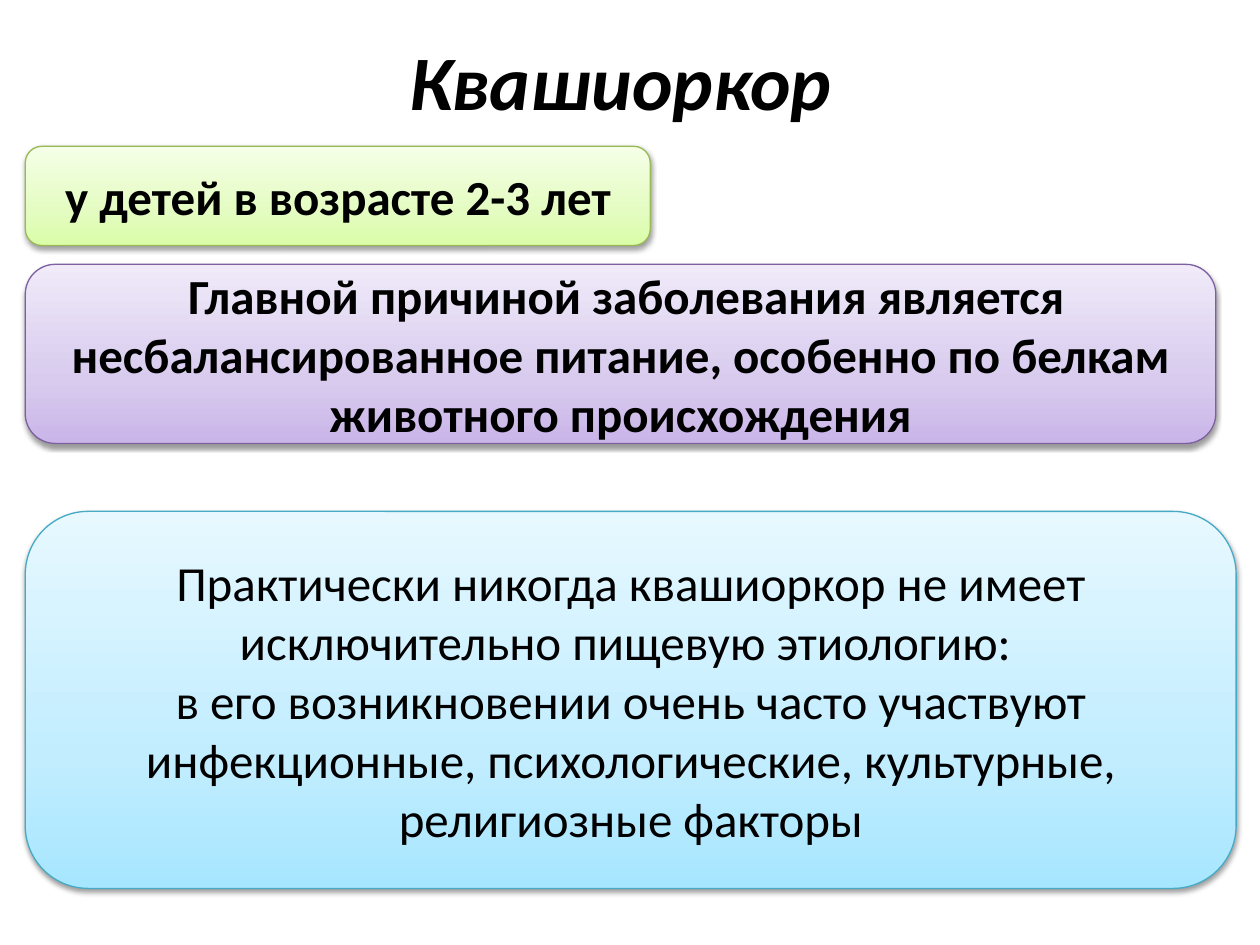
import copy

import lxml.etree
import pptx
import pptx.dml.color
import pptx.enum.shapes
import pptx.enum.text
import pptx.oxml.ns
import pptx.util

TITLE = {"at": (1.09, 0.53, 22.86, 2.16), "text": "Квашиоркор"}
PANEL_LEFT = 0.51
PANELS = [
    {
        "look": "violet", "top": 5.33, "size": (24.0, 3.61), "bold": True,
        "lines": [" Главной причиной заболевания является несбалансированное питание, "
                  "особенно по белкам животного происхождения"],
    },
    {
        "look": "green", "top": 2.95, "size": (12.6, 2.0), "bold": True,
        "lines": ["у детей в возрасте 2-3 лет"],
    },
    {
        "look": "blue", "top": 10.31, "size": (24.41, 7.6), "bold": False,
        "lines": ["Практически никогда квашиоркор не имеет исключительно пищевую этиологию: ",
                  "в его возникновении очень часто участвуют инфекционные, психологические, "
                  "культурные, религиозные факторы"],
    },
]
THEME = {
    "font": "Calibri",
    "ink": "000000",
    "title_size": 44,
    "body_size": 28,
    "line_width": 0.75,
    "stops": (0, 0.35, 1),
    "shadow": {"blur": 3.1, "distance": 1.6, "opacity": 38},
    "violet": {"fill": ("C9B5E8", "D8CBEE", "F0EAF9"), "line": "7D60A0"},
    "green": {"fill": ("DAFDA7", "E4FCC2", "F5FFE7"), "line": "98B955"},
    "blue": {"fill": ("A7E6FF", "C1EDFF", "E7F8FF"), "line": "46AAC5"},
}

qn = pptx.oxml.ns.qn


def rgb(code):
    return pptx.dml.color.RGBColor.from_string(code)


def write(box, lines, size, bold, italic=False):
    frame = box.text_frame
    frame.word_wrap = True
    frame.vertical_anchor = pptx.enum.text.MSO_ANCHOR.MIDDLE
    for index, line in enumerate(lines):
        para = frame.add_paragraph() if index else frame.paragraphs[0]
        para.alignment = pptx.enum.text.PP_ALIGN.CENTER
        span = para.add_run()
        span.text = line
        span.font.name = THEME["font"]
        span.font.size = pptx.util.Pt(size)
        span.font.bold = bold
        span.font.italic = italic
        span.font.color.rgb = rgb(THEME["ink"])


def paint_gradient(box, colours):
    box.fill.gradient()
    box.fill.gradient_angle = 90
    stop_list = box._element.spPr.find(qn("a:gradFill")).find(qn("a:gsLst"))
    stop_list.insert(1, copy.deepcopy(stop_list[0]))
    for stop, position, colour in zip(box.fill.gradient_stops, THEME["stops"], colours):
        stop.position = position
        stop.color.rgb = rgb(colour)


def cast_shadow(box):
    look = THEME["shadow"]
    box.shadow.inherit = False
    effects = box._element.spPr.find(qn("a:effectLst"))
    shadow = lxml.etree.SubElement(
        effects, qn("a:outerShdw"),
        blurRad=str(pptx.util.Pt(look["blur"])), dist=str(pptx.util.Pt(look["distance"])),
        dir="5400000", rotWithShape="0")
    colour = lxml.etree.SubElement(shadow, qn("a:srgbClr"), val=THEME["ink"])
    lxml.etree.SubElement(colour, qn("a:alpha"), val=str(look["opacity"] * 1000))


def add_panel(page, panel):
    look = THEME[panel["look"]]
    frame = (PANEL_LEFT, panel["top"], *panel["size"])
    box = page.shapes.add_shape(
        pptx.enum.shapes.MSO_SHAPE.ROUNDED_RECTANGLE, *map(pptx.util.Cm, frame))
    paint_gradient(box, look["fill"])
    box.line.color.rgb = rgb(look["line"])
    box.line.width = pptx.util.Pt(THEME["line_width"])
    cast_shadow(box)
    write(box, panel["lines"], THEME["body_size"], panel["bold"])


def main():
    deck = pptx.Presentation()
    deck.slide_width = pptx.util.Cm(25.4)
    deck.slide_height = pptx.util.Cm(19.05)
    page = deck.slides.add_slide(deck.slide_layouts[6])
    title = page.shapes.add_textbox(*map(pptx.util.Cm, TITLE["at"]))
    write(title, [TITLE["text"]], THEME["title_size"], bold=True, italic=True)
    for panel in PANELS:
        add_panel(page, panel)
    deck.save("out.pptx")


if __name__ == "__main__":
    main()
